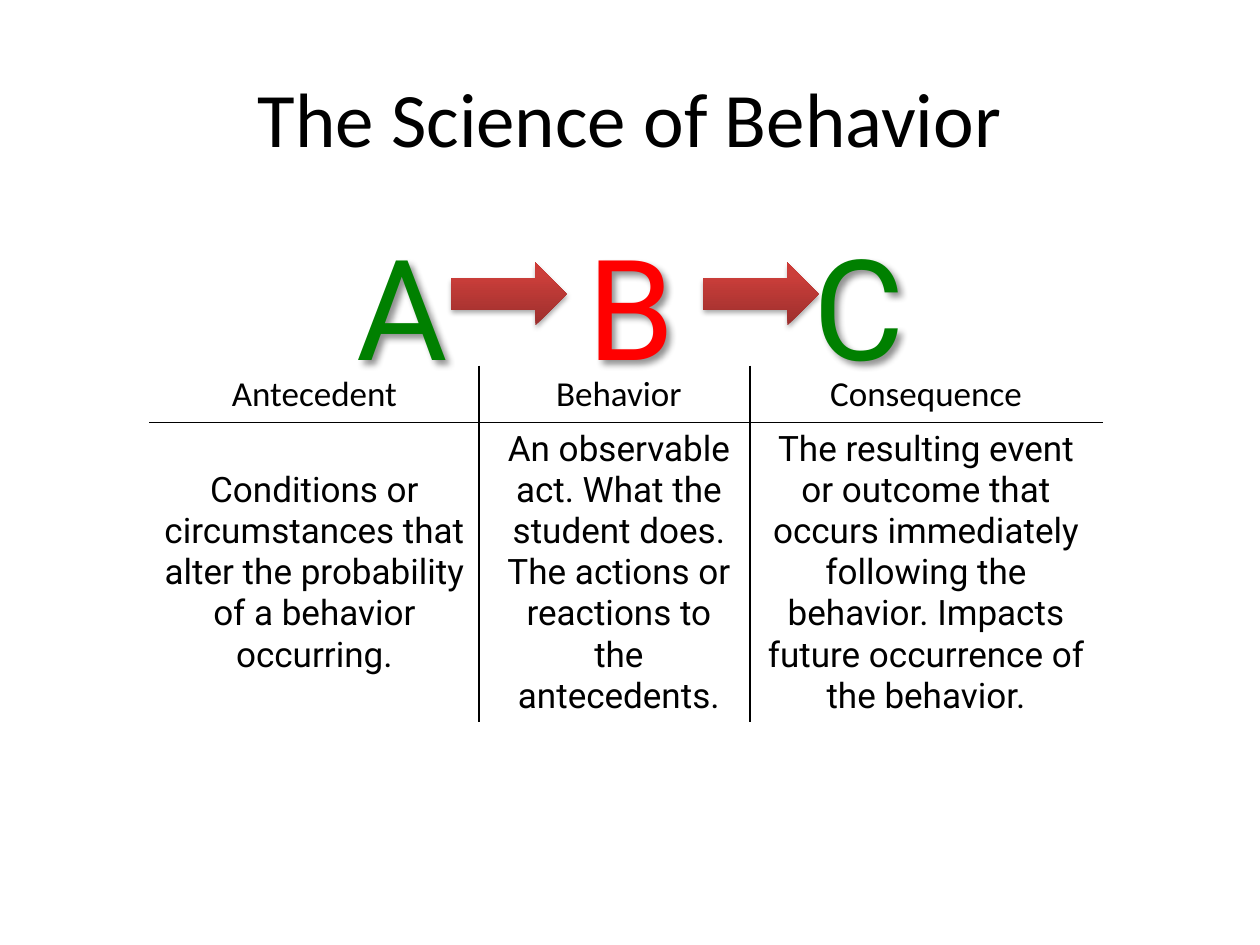
from copy import deepcopy
from pptx import Presentation
from pptx.dml.color import RGBColor as RGB
from pptx.enum.shapes import MSO_SHAPE as Kind
from pptx.enum.text import MSO_ANCHOR as Anchor, PP_ALIGN as Align
from pptx.oxml import parse_xml
from pptx.oxml.ns import nsdecls, qn
from pptx.util import Pt

BLACK = RGB(0x00, 0x00, 0x00)
WHITE = RGB(0xFF, 0xFF, 0xFF)
GREEN = RGB(0x00, 0x80, 0x00)
RED = RGB(0xFF, 0x00, 0x00)
GRADE = [(0, RGB(0x9C, 0x2F, 0x2D)), (0.8, RGB(0xCB, 0x3E, 0x3A)),
         (1, RGB(0xCE, 0x3B, 0x37))]
HEADS = ["Antecedent", "Behavior", "Consequence"]
NOTES = [
    "Conditions or circumstances that alter the probability of a behavior "
    "occurring.",
    "An observable act. What the student does. The actions or reactions to "
    "the antecedents.",
    "The resulting event or outcome that occurs immediately following the "
    "behavior. Impacts future occurrence of the behavior.",
]


def write(frame, text, size, font, color):
    para = frame.paragraphs[0]
    para.alignment = Align.CENTER
    run = para.add_run()
    run.text = text
    run.font.size = Pt(size)
    run.font.name = font
    run.font.color.rgb = color
    return para


def shade(shape, blur, dist, angle, alpha):
    shape.shadow.inherit = False
    glow = shape._element.spPr.find(qn("a:effectLst"))
    glow.append(parse_xml(
        f'<a:outerShdw {nsdecls("a")} blurRad="{Pt(blur)}" dist="{Pt(dist)}" '
        f'dir="{angle * 60000}" algn="ctr" rotWithShape="0">'
        f'<a:srgbClr val="{BLACK}"><a:alpha val="{alpha * 1000}"/>'
        '</a:srgbClr></a:outerShdw>'))


def edge(cell, colors):
    props = cell._tc.get_or_add_tcPr()
    for i, (side, color) in enumerate(zip("LRTB", colors)):
        props.insert(i, parse_xml(
            f'<a:ln{side} {nsdecls("a")} w="{Pt(1)}"><a:solidFill>'
            f'<a:srgbClr val="{color}"/></a:solidFill></a:ln{side}>'))


def add_title(slide, left, top, width, height):
    title = slide.shapes.title
    title.left, title.top = Pt(left), Pt(top)
    title.width, title.height = Pt(width), Pt(height)
    title.text_frame.vertical_anchor = Anchor.MIDDLE
    write(title.text_frame, "The Science of Behavior", 44, "Calibri", BLACK)


def add_table(slide, left, top, width, height):
    frame = slide.shapes.add_table(2, 3, Pt(left), Pt(top), Pt(width),
                                   Pt(height))
    table = frame.table
    table.first_row = table.horz_banding = False
    for col, part in zip(table.columns, (188, 155, 201)):
        col.width = Pt(width * part / 544)
    table.rows[0].height = Pt(32)
    table.rows[1].height = Pt(height - 32)
    for r, (texts, font) in enumerate([(HEADS, "Calibri"),
                                       (NOTES, "Roboto")]):
        for c, text in enumerate(texts):
            cell = table.cell(r, c)
            cell.vertical_anchor = Anchor.MIDDLE
            cell.fill.background()
            para = write(cell.text_frame, text, 20, font, BLACK)
            if c == 1:
                para._p.get_or_add_pPr().set("marL", str(Pt(5)))
            inner = (c > 0, c < 2, r > 0, r < 1)
            edge(cell, [BLACK if flag else WHITE for flag in inner])


def add_chain(slide, left, top, width, height):
    wide = 90
    step = (width - wide) / 2
    for i, (mark, color) in enumerate([("A", GREEN), ("B", RED),
                                       ("C", GREEN)]):
        box = slide.shapes.add_textbox(Pt(left + i * step), Pt(top),
                                       Pt(wide), Pt(height))
        frame = box.text_frame
        frame.word_wrap = True
        frame.margin_left = frame.margin_right = 0
        frame.margin_top = frame.margin_bottom = 0
        write(frame, mark, 80, "Roboto", color)
        shade(box, 4, 3, 45, 43)
    for i in range(2):
        add_arrow(slide, left + 73 + 144 * i, top + 24, 66, 36)


def add_arrow(slide, left, top, width, height):
    arrow = slide.shapes.add_shape(Kind.RIGHT_ARROW, Pt(left), Pt(top),
                                   Pt(width), Pt(height))
    arrow.line.fill.background()
    fill = arrow.fill
    fill.gradient()
    fill.gradient_angle = 90
    stops = arrow._element.spPr.find(qn("a:gradFill")).find(qn("a:gsLst"))
    stops.append(deepcopy(stops[-1]))
    for stop, (place, color) in zip(fill.gradient_stops, GRADE):
        stop.position = place
        stop.color.rgb = color
    shade(arrow, 3.1, 1.8, 90, 35)


def main():
    deck = Presentation()
    deck.slide_width, deck.slide_height = Pt(720), Pt(540)
    slide = deck.slides.add_slide(deck.slide_layouts[5])
    add_title(slide, 36, 21.6, 648, 90)
    add_table(slide, 85.7, 209.3, 544, 203.5)
    add_chain(slide, 185, 126, 351, 94)
    deck.save("out.pptx")


if __name__ == "__main__":
    main()
